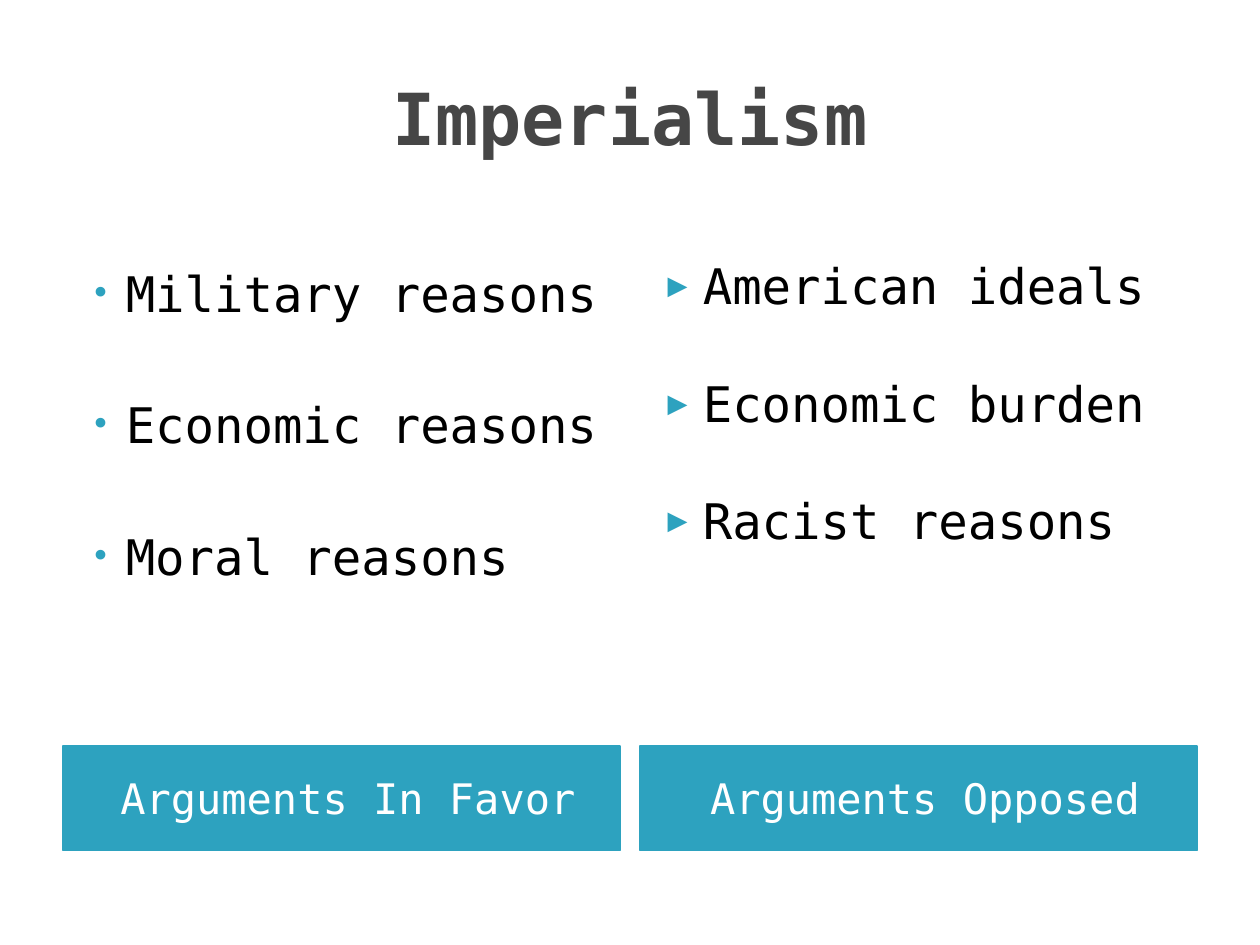
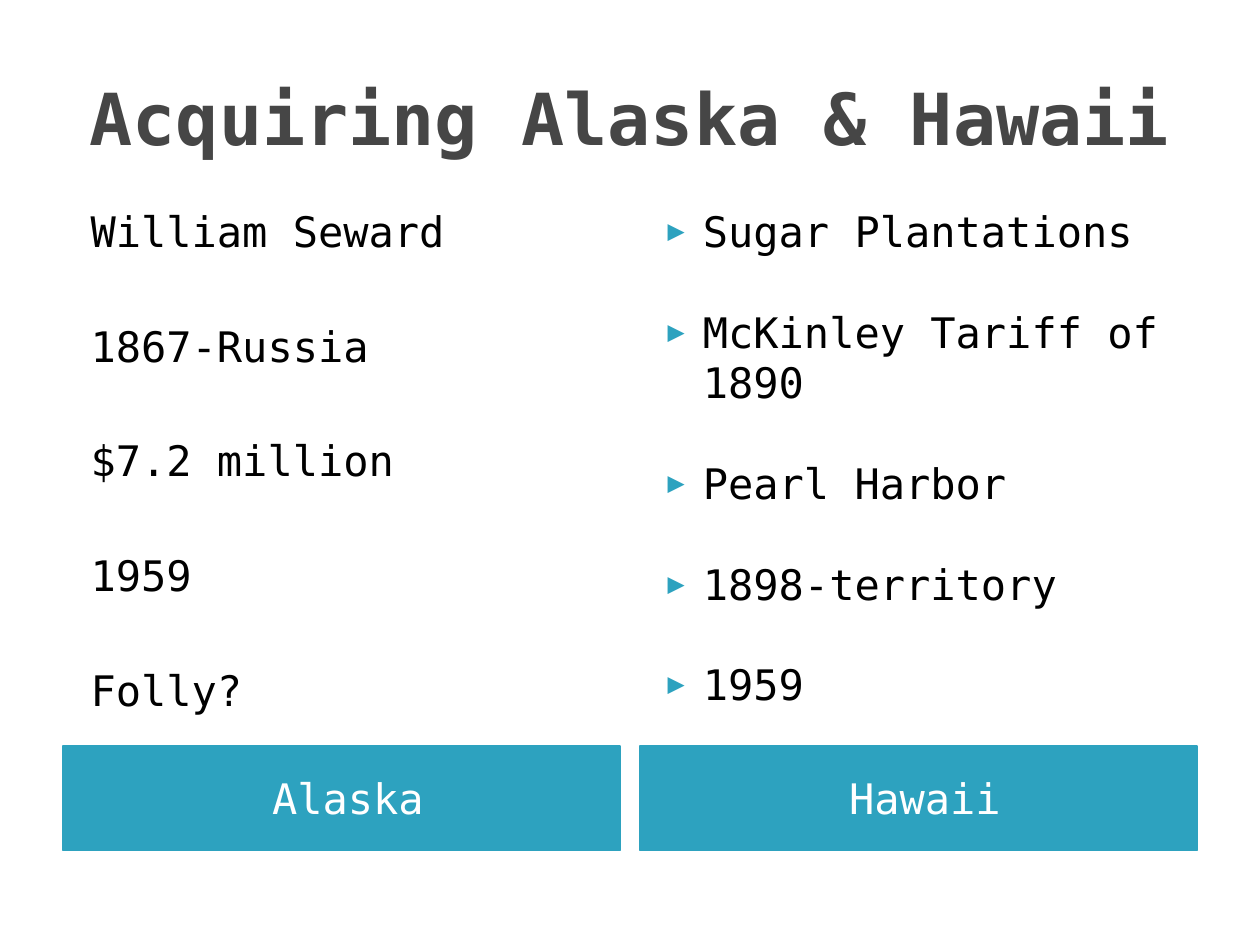
import pptx
import pptx.dml.color
import pptx.enum.shapes
import pptx.enum.text
import pptx.oxml.ns
import pptx.util
from lxml import etree

PX = 9144  # one px is a hundredth of an inch
FONT = "DejaVu Sans Mono"
TEAL = pptx.dml.color.RGBColor(0x2D, 0xA2, 0xBF)
GRAY = pptx.dml.color.RGBColor(0x46, 0x46, 0x46)
BLACK = pptx.dml.color.RGBColor(0, 0, 0)
WHITE = pptx.dml.color.RGBColor(255, 255, 255)

COLUMN_LEFTS = (50, 508)
COLUMN_WIDTH = 442
BODY_TOP, BODY_HEIGHT = 158, 431
BAND_TOP, BAND_HEIGHT = 592, 83
LINE_RATIO = 1.2
CENTER = pptx.enum.text.PP_ALIGN.CENTER
MIDDLE = pptx.enum.text.MSO_ANCHOR.MIDDLE

# Column: band label, bullet, text size, top inset, extra gap in points, items
SLIDES = [
    ("Imperialism", [
        ("Arguments In Favor", "•", 28, 51, 8,
         ["Military reasons", "Economic reasons", "Moral reasons"]),
        ("Arguments Opposed", "▶", 28, 45, 0,
         ["American ideals", "Economic burden", "Racist reasons"]),
    ]),
    ("Acquiring Alaska & Hawaii", [
        ("Alaska", None, 24, 5, 8,
         ["William Seward", "1867-Russia", "$7.2 million", "1959", "Folly?"]),
        ("Hawaii", "▶", 24, 5, 0,
         ["Sugar Plantations", "McKinley Tariff of 1890", "Pearl Harbor",
          "1898-territory", "1959"]),
    ]),
]


def add_run(paragraph, text, size, color, bold=False):
    run = paragraph.add_run()
    run.text = text
    run.font.name = FONT
    run.font.size = pptx.util.Pt(size)
    run.font.bold = bold
    run.font.color.rgb = color


def set_bullet(paragraph, bullet):
    """Indent the paragraph and give it a teal bullet, if there is one."""
    properties = paragraph._p.get_or_add_pPr()
    properties.set("marL", str((40 if bullet else 12) * PX))
    properties.set("indent", str((-28 if bullet else 0) * PX))
    if not bullet:
        etree.SubElement(properties, pptx.oxml.ns.qn("a:buNone"))
        return
    bullet_color = etree.SubElement(properties, pptx.oxml.ns.qn("a:buClr"))
    etree.SubElement(bullet_color, pptx.oxml.ns.qn("a:srgbClr"), val=str(TEAL))
    etree.SubElement(properties, pptx.oxml.ns.qn("a:buSzPct"), val="68000")
    etree.SubElement(properties, pptx.oxml.ns.qn("a:buFont"), typeface=FONT)
    etree.SubElement(properties, pptx.oxml.ns.qn("a:buChar"), char=bullet)


presentation = pptx.Presentation()
presentation.slide_width = 1000 * PX
presentation.slide_height = 750 * PX
title_only = presentation.slide_layouts[5]

for heading, columns in SLIDES:
    slide = presentation.slides.add_slide(title_only)
    title = slide.shapes.title
    title.left, title.top = 50 * PX, 30 * PX
    title.width, title.height = 900 * PX, 125 * PX
    title.text_frame.auto_size = pptx.enum.text.MSO_AUTO_SIZE.NONE
    title.text_frame.vertical_anchor = MIDDLE
    title_line = title.text_frame.paragraphs[0]
    title_line.alignment = CENTER
    add_run(title_line, heading, 41, GRAY, bold=True)

    for left, column in zip(COLUMN_LEFTS, columns):
        label, bullet, size, top_inset, extra_gap, items = column

        band = slide.shapes.add_shape(
            pptx.enum.shapes.MSO_SHAPE.RECTANGLE,
            left * PX, BAND_TOP * PX, COLUMN_WIDTH * PX, BAND_HEIGHT * PX)
        band.shadow.inherit = False
        band.fill.solid()
        band.fill.fore_color.rgb = TEAL
        band.line.color.rgb = TEAL
        band.line.width = pptx.util.Pt(0.75)
        band.text_frame.margin_left = 20 * PX
        band.text_frame.vertical_anchor = MIDDLE
        band_line = band.text_frame.paragraphs[0]
        band_line.alignment = CENTER
        add_run(band_line, label, 24, WHITE)

        body = slide.shapes.add_textbox(
            left * PX, BODY_TOP * PX, COLUMN_WIDTH * PX, BODY_HEIGHT * PX)
        arguments = body.text_frame
        arguments.word_wrap = True
        arguments.margin_top = top_inset * PX
        line_height = size * LINE_RATIO
        for index, item in enumerate(items):
            paragraph = arguments.paragraphs[0] if index == 0 else arguments.add_paragraph()
            set_bullet(paragraph, bullet)
            paragraph.line_spacing = pptx.util.Pt(line_height)
            if index > 0:
                paragraph.space_before = pptx.util.Pt(line_height + extra_gap)
            add_run(paragraph, item, size, BLACK)

presentation.save("out.pptx")
